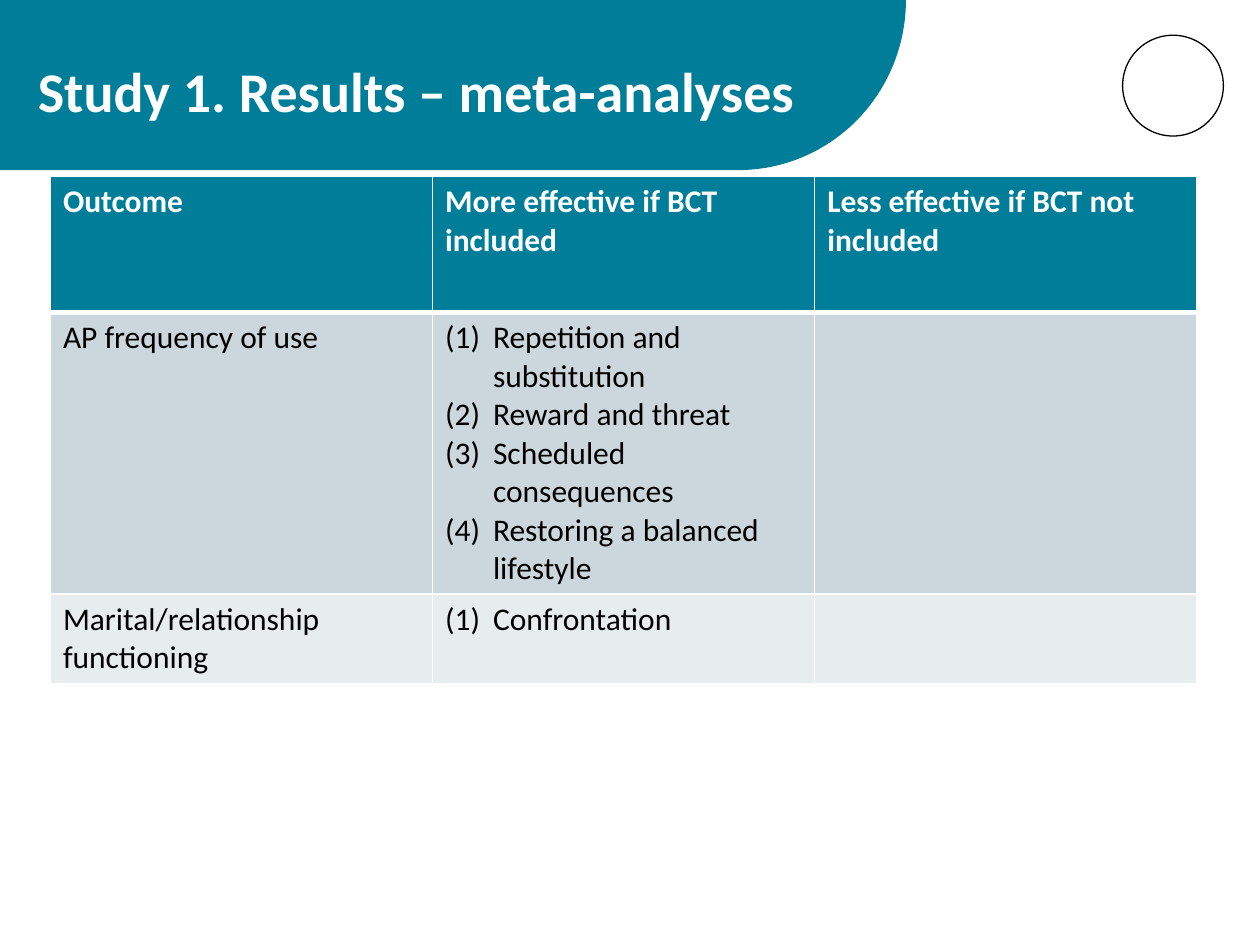
from math import cos, pi, sin

from lxml.etree import SubElement
from pptx import Presentation
from pptx.dml.color import RGBColor
from pptx.enum.shapes import MSO_SHAPE as Shape
from pptx.enum.text import MSO_ANCHOR as Anchor, MSO_AUTO_SIZE as AutoSize, PP_ALIGN as Align
from pptx.oxml import parse_xml
from pptx.oxml.ns import nsdecls, qn
from pptx.util import Inches, Pt

TEAL, WHITE, BLACK = "007D98", "FFFFFF", "000000"
BODY_FILLS = ["CCD7DD", "E7ECEF"]

HEADERS = ["Outcome", "More effective if BCT included", "Less effective if BCT not included"]
RESULTS = [
    ("AP frequency of use",
     ["Repetition and substitution", "Reward and threat",
      "Scheduled consequences", "Restoring a balanced lifestyle"], ""),
    ("Marital/relationship functioning", ["Confrontation"], ""),
]
ROW_HEIGHTS = [1.08, 2.23, 0.71]


def color(value):
    return RGBColor.from_string(value)


class SlideBuilder:
    font_name = "Calibri"

    def __init__(self, slide):
        self.slide = slide

    def style(self, paragraph, size, text_color, bold=False):
        paragraph.alignment = Align.LEFT
        font = paragraph.font
        font.name, font.size, font.bold = self.font_name, Pt(size), bold
        font.color.rgb = color(text_color)

    def band(self, width, height, radius, steps=48):
        """Header band with a rounded lower right corner."""
        center = width - radius
        angles = [pi / 2 * step / steps for step in range(steps + 1)]
        curve = [(Inches(center + radius * cos(angle)), Inches(height * sin(angle)))
                 for angle in angles]
        builder = self.slide.shapes.build_freeform(0, 0)
        builder.add_line_segments(curve + [(0, Inches(height))], close=True)
        shape = builder.convert_to_shape()
        shape.shadow.inherit = False
        shape.fill.solid()
        shape.fill.fore_color.rgb = color(TEAL)
        shape.line.fill.background()

    def ring(self, left, top, diameter):
        shape = self.slide.shapes.add_shape(
            Shape.OVAL, Inches(left), Inches(top), Inches(diameter), Inches(diameter))
        shape.shadow.inherit = False
        shape.fill.background()
        shape.line.color.rgb = color(BLACK)
        shape.line.width = Pt(0.75)

    def title(self, text, left, top, width, height):
        shape = self.slide.shapes.title
        shape.left, shape.top = Inches(left), Inches(top)
        shape.width, shape.height = Inches(width), Inches(height)
        frame = shape.text_frame
        frame.text = text
        frame.word_wrap = True
        frame.auto_size = AutoSize.NONE
        frame.vertical_anchor = Anchor.TOP
        paragraph = frame.paragraphs[0]
        paragraph.line_spacing = 0.9
        self.style(paragraph, 32, WHITE, bold=True)
        # Keep the title in front of the band
        tree = self.slide.shapes._spTree
        tree.append(shape._element)

    def number(self, paragraph):
        properties = paragraph._p.get_or_add_pPr()
        properties.set("marL", str(Inches(0.38)))
        properties.set("indent", str(-Inches(0.38)))
        SubElement(properties, qn("a:buFont"), typeface="+mj-lt")
        SubElement(properties, qn("a:buAutoNum"), type="arabicParenBoth")

    def borders(self, cell, bottom):
        properties = cell._tc.get_or_add_tcPr()
        widths = {"lnL": 1, "lnR": 1, "lnT": 1, "lnB": bottom}
        for position, (tag, width) in enumerate(widths.items()):
            properties.insert(position, parse_xml(
                f'<a:{tag} {nsdecls("a")} w="{Pt(width)}"><a:solidFill>'
                f'<a:srgbClr val="{WHITE}"/></a:solidFill></a:{tag}>'))

    def cell(self, cell, content, fill, text_color, header=False):
        numbered = isinstance(content, list)
        cell.text = "\n".join(content) if numbered else content
        for paragraph in cell.text_frame.paragraphs:
            if numbered:
                self.number(paragraph)
            self.style(paragraph, 18, text_color, bold=header)
        cell.fill.solid()
        cell.fill.fore_color.rgb = color(fill)
        self.borders(cell, bottom=3 if header else 1)

    def table(self, headers, body, left, top, width, heights):
        table = self.slide.shapes.add_table(
            len(body) + 1, len(headers), Inches(left), Inches(top),
            Inches(width), Inches(sum(heights))).table
        for row, height in zip(table.rows, heights):
            row.height = Inches(height)
        for column, text in enumerate(headers):
            self.cell(table.cell(0, column), text, TEAL, WHITE, header=True)
        for index, contents in enumerate(body):
            fill = BODY_FILLS[index % len(BODY_FILLS)]
            for column, content in enumerate(contents):
                self.cell(table.cell(index + 1, column), content, fill, BLACK)


def main():
    presentation = Presentation()
    presentation.slide_width, presentation.slide_height = Inches(10), Inches(7.5)
    builder = SlideBuilder(presentation.slides.add_slide(presentation.slide_layouts[5]))

    # Header
    builder.band(7.19, 1.35, radius=1.33)
    builder.ring(8.91, 0.28, 0.8)
    builder.title("Study 1. Results – meta-analyses", 0.2, 0.46, 6.99, 0.89)

    # Results table
    builder.table(HEADERS, RESULTS, 0.4, 1.4, 9.1, ROW_HEIGHTS)

    presentation.save("out.pptx")


if __name__ == "__main__":
    main()
